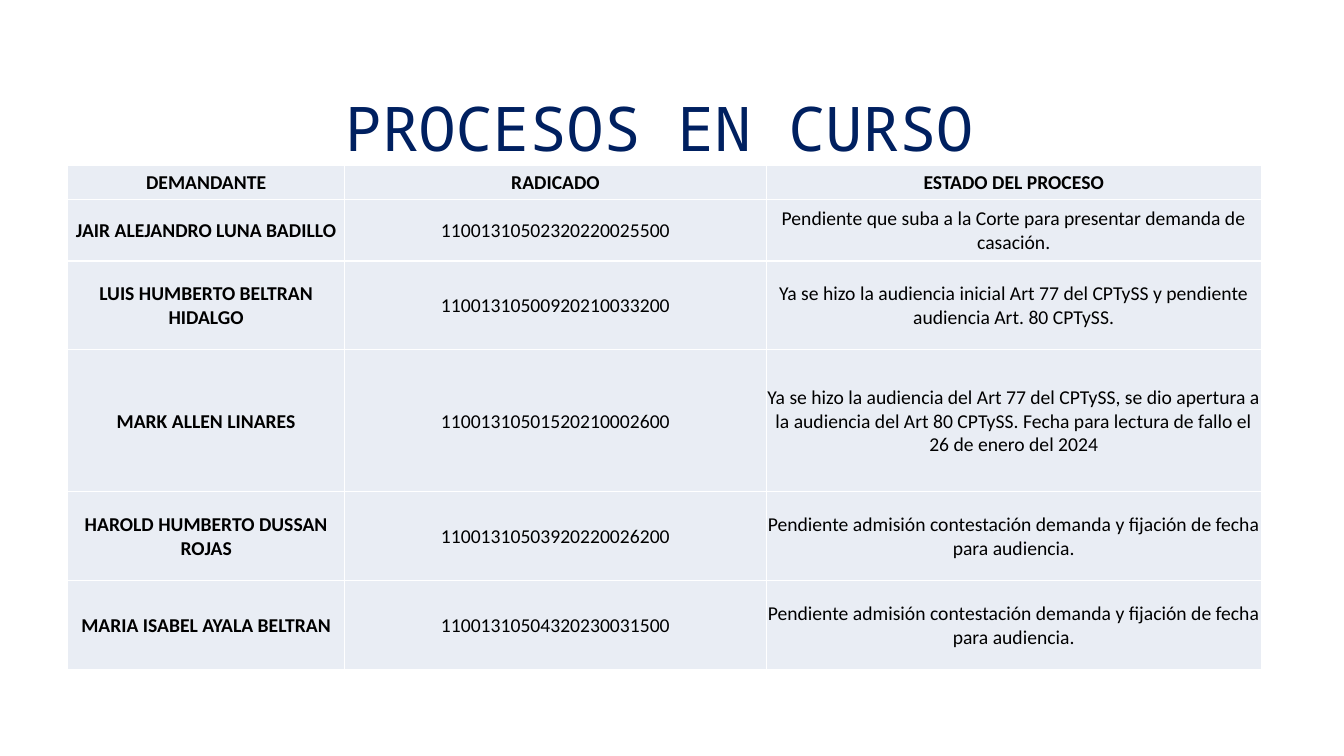
"""Build the slide that lists the court proceedings under way."""
from lxml.etree import SubElement
from pptx import Presentation
from pptx.dml.color import RGBColor
from pptx.enum.text import MSO_ANCHOR as Anchor, PP_ALIGN as Align
from pptx.oxml.ns import qn
from pptx.util import Inches, Pt

NAVY = RGBColor(0x00, 0x20, 0x60)
BLACK = RGBColor(0x00, 0x00, 0x00)
WHITE = RGBColor(0xFF, 0xFF, 0xFF)
PALE = RGBColor(0xE9, 0xED, 0xF4)

COLUMN_WIDTHS = [2.75, 4.18, 4.91]
ROW_HEIGHTS = [0.34, 0.61, 0.88, 1.41, 0.88, 0.88]
PENDING = "Pendiente admisión contestación demanda y fijación de fecha para audiencia."
PROCEEDINGS = [
    ("DEMANDANTE", "RADICADO", "ESTADO DEL PROCESO"),
    ("JAIR ALEJANDRO LUNA BADILLO", "11001310502320220025500",
     "Pendiente que suba a la Corte para presentar demanda de casación."),
    ("LUIS HUMBERTO BELTRAN HIDALGO", "11001310500920210033200",
     "Ya se hizo la audiencia inicial Art 77 del CPTySS y pendiente audiencia Art. 80 CPTySS."),
    ("MARK ALLEN LINARES", "11001310501520210002600",
     "Ya se hizo la audiencia del Art 77 del CPTySS, se dio apertura a la audiencia "
     "del Art 80 CPTySS. Fecha para lectura de fallo el 26 de enero del 2024"),
    ("HAROLD HUMBERTO DUSSAN ROJAS", "11001310503920220026200", PENDING),
    ("MARIA ISABEL AYALA BELTRAN", "11001310504320230031500", PENDING),
]


def write(frame, text, font="Calibri", size=14, color=BLACK, bold=False, align=Align.CENTER):
    """Put formatted text in the first paragraph of a frame."""
    para = frame.paragraphs[0]
    para.alignment = align
    span = para.add_run()
    span.text = text
    span.font.name = font
    span.font.size = Pt(size)
    span.font.bold = bold
    span.font.color.rgb = color


class SlideBuilder:
    """Holds the table style and the current page."""

    def __init__(self, page, fill=PALE, border=WHITE, border_width=1):
        self.page = page
        self.fill = fill
        self.border = border
        self.border_width = border_width

    def title(self, text, left, top, width, height):
        """Add the heading."""
        box = self.page.shapes.add_textbox(
            Inches(left), Inches(top), Inches(width), Inches(height))
        frame = box.text_frame
        frame.word_wrap = True
        frame.vertical_anchor = Anchor.MIDDLE
        frame.margin_left = frame.margin_right = frame.margin_top = frame.margin_bottom = 0
        write(frame, text, font="Noto Sans Mono", size=44, color=NAVY, align=Align.LEFT)

    def cell(self, cell, text, bold):
        """Fill, border and write one table cell."""
        cell.vertical_anchor = Anchor.MIDDLE
        cell.margin_left = cell.margin_right = cell.margin_top = Inches(0.01)
        cell.margin_bottom = 0
        properties = cell._tc.get_or_add_tcPr()
        for side in ("a:lnL", "a:lnR", "a:lnT", "a:lnB"):
            line = SubElement(properties, qn(side), w=str(Pt(self.border_width)))
            solid = SubElement(line, qn("a:solidFill"))
            SubElement(solid, qn("a:srgbClr"), val=str(self.border))
        cell.fill.solid()
        cell.fill.fore_color.rgb = self.fill
        write(cell.text_frame, text, bold=bold)

    def table(self, rows, left, top, widths, heights):
        """Add a table whose first row and first column are bold."""
        table = self.page.shapes.add_table(
            len(heights), len(widths), Inches(left), Inches(top),
            Inches(sum(widths)), Inches(sum(heights))).table
        for column, width in zip(table.columns, widths):
            column.width = Inches(width)
        for row, height in zip(table.rows, heights):
            row.height = Inches(height)
        for i, texts in enumerate(rows):
            for j, text in enumerate(texts):
                self.cell(table.cell(i, j), text, bold=i == 0 or j == 0)


def main():
    """Create the deck and save it."""
    deck = Presentation()
    deck.slide_width = Inches(13.33)
    deck.slide_height = Inches(7.5)
    builder = SlideBuilder(deck.slides.add_slide(deck.slide_layouts[6]))
    builder.title("PROCESOS EN CURSO", 3.42, 0.88, 6.33, 0.76)
    builder.table(PROCEEDINGS, 0.67, 1.64, COLUMN_WIDTHS, ROW_HEIGHTS)
    deck.save("out.pptx")


if __name__ == "__main__":
    main()
